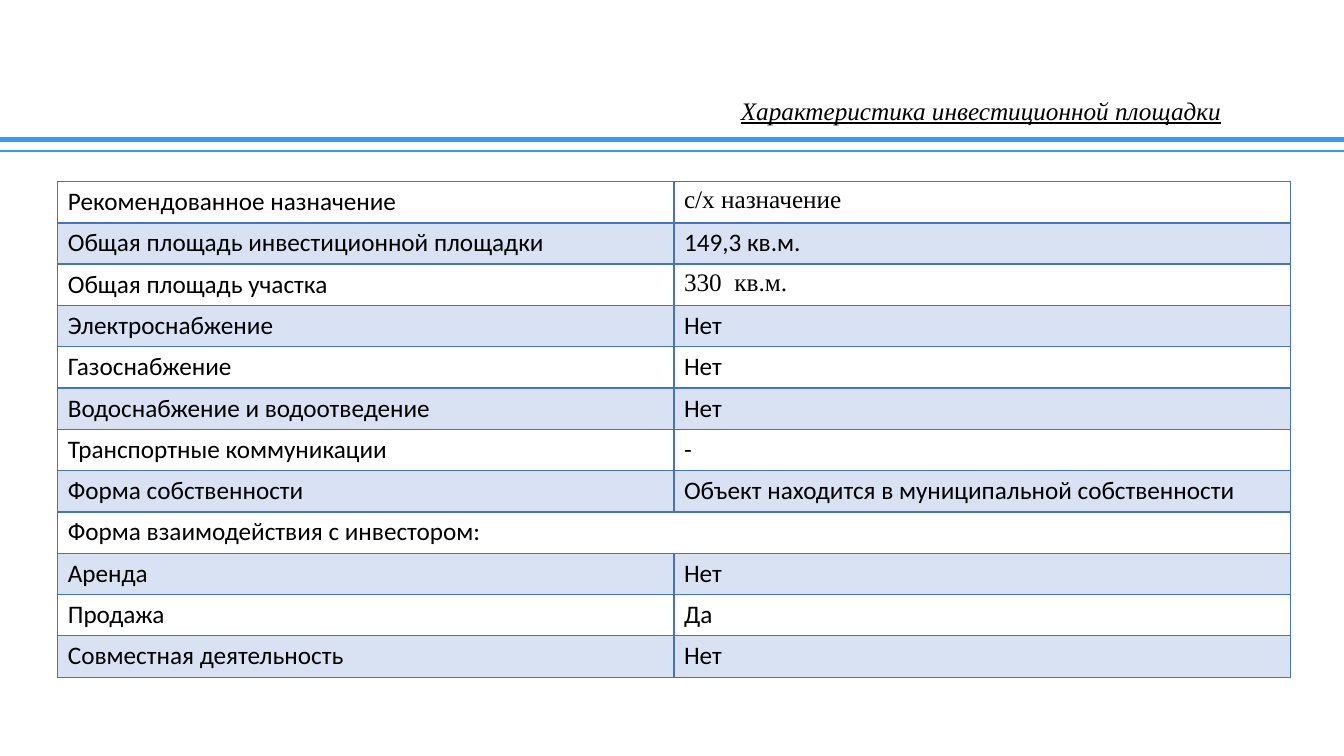
from dataclasses import dataclass

from lxml.etree import SubElement as sub
from pptx import Presentation
from pptx.dml.color import RGBColor as RGB
from pptx.enum.shapes import MSO_CONNECTOR as Connector
from pptx.enum.text import MSO_ANCHOR as Anchor, PP_ALIGN as Align
from pptx.oxml.ns import qn
from pptx.util import Inches, Pt


@dataclass(frozen=True)
class Theme:
    rule: str = "3399FF"
    grid: str = "4472C4"
    text: str = "000000"
    serif: str = "Times New Roman"
    sans: str = "Calibri"
    size: int = 18
    band_alpha: int = 20
    border: int = 1
    header_border: int = 2


THEME = Theme()
WIDTH, HEIGHT = Inches(13.33), Inches(7.5)
TITLE = "Характеристика инвестиционной площадки"
SITE_ROWS = [
    ("Рекомендованное назначение", "с/х назначение"),
    ("Общая площадь инвестиционной площадки", "149,3 кв.м."),
    ("Общая площадь участка", "330  кв.м."),
    ("Электроснабжение", "Нет"),
    ("Газоснабжение", "Нет"),
    ("Водоснабжение и водоотведение", "Нет"),
    ("Транспортные коммуникации", "-"),
    ("Форма собственности", "Объект находится в муниципальной собственности"),
    ("Форма взаимодействия с инвестором:", None),
    ("Аренда", "Нет"),
    ("Продажа", "Да"),
    ("Совместная деятельность", "Нет"),
]
SERIF_VALUES = {"с/х назначение", "330  кв.м."}


def share(left, top, width, height):
    return (int(WIDTH * left), int(HEIGHT * top),
            int(WIDTH * width), int(HEIGHT * height))


def write(tf, text, font, **formats):
    p = tf.paragraphs[0]
    r = p.add_run()
    r.text = text
    base = {"name": font, "size": Pt(THEME.size), "bold": False}
    for name, value in (base | formats).items():
        setattr(r.font, name, value)
    r.font.color.rgb = RGB.from_string(THEME.text)
    return p


def add_title(s, box):
    sp = s.shapes.title
    for name, value in zip(("left", "top", "width", "height"), box):
        setattr(sp, name, value)
    tf = sp.text_frame
    tf.word_wrap = True
    tf.vertical_anchor = Anchor.MIDDLE
    p = write(tf, TITLE, THEME.serif, italic=True, underline=True)
    p.alignment = Align.CENTER
    p.line_spacing = 0.9


def add_rules(s, box):
    left, top, width, height = box
    for y, weight in ((top, 3.5), (top + height, 1.5)):
        line = s.shapes.add_connector(Connector.STRAIGHT, left, y, left + width, y)
        line.line.color.rgb = RGB.from_string(THEME.rule)
        line.line.width = Pt(weight)
        sub(line._element.spPr, qn("a:effectLst"))


def add_borders(cell, row):
    tc_pr = cell._tc.get_or_add_tcPr()
    thick = {0: "lnB", 1: "lnT"}.get(row)
    for side in ("lnL", "lnR", "lnT", "lnB"):
        weight = THEME.header_border if side == thick else THEME.border
        ln = sub(tc_pr, qn(f"a:{side}"), w=str(Pt(weight)))
        sub(sub(ln, qn("a:solidFill")), qn("a:srgbClr"), val=THEME.grid)


def fill_cell(cell, banded):
    if not banded:
        cell.fill.background()
        return
    cell.fill.solid()
    cell.fill.fore_color.rgb = RGB.from_string(THEME.grid)
    color = cell._tc.tcPr.find(qn("a:solidFill")).find(qn("a:srgbClr"))
    sub(color, qn("a:alpha"), val=str(THEME.band_alpha * 1000))


def add_site_table(s, box):
    table = s.shapes.add_table(len(SITE_ROWS), 2, *box).table
    table.first_row = table.horz_banding = False
    for i, values in enumerate(SITE_ROWS):
        for j, value in enumerate(values):
            cell = table.cell(i, j)
            add_borders(cell, i)
            fill_cell(cell, i % 2 == 1)
            if value is None:
                table.cell(i, 0).merge(cell)
            else:
                font = THEME.serif if value in SERIF_VALUES else THEME.sans
                write(cell.text_frame, value, font)


def add_site_slide(prs):
    s = prs.slides.add_slide(prs.slide_layouts[5])
    add_rules(s, share(0, 0.184, 1, 0.016))
    add_title(s, share(0.5, 0.13, 0.46, 0.036))
    add_site_table(s, share(0.043, 0.24, 0.917, 0.656))


def main():
    prs = Presentation()
    prs.slide_width, prs.slide_height = WIDTH, HEIGHT
    add_site_slide(prs)
    prs.save("out.pptx")


if __name__ == "__main__":
    main()
